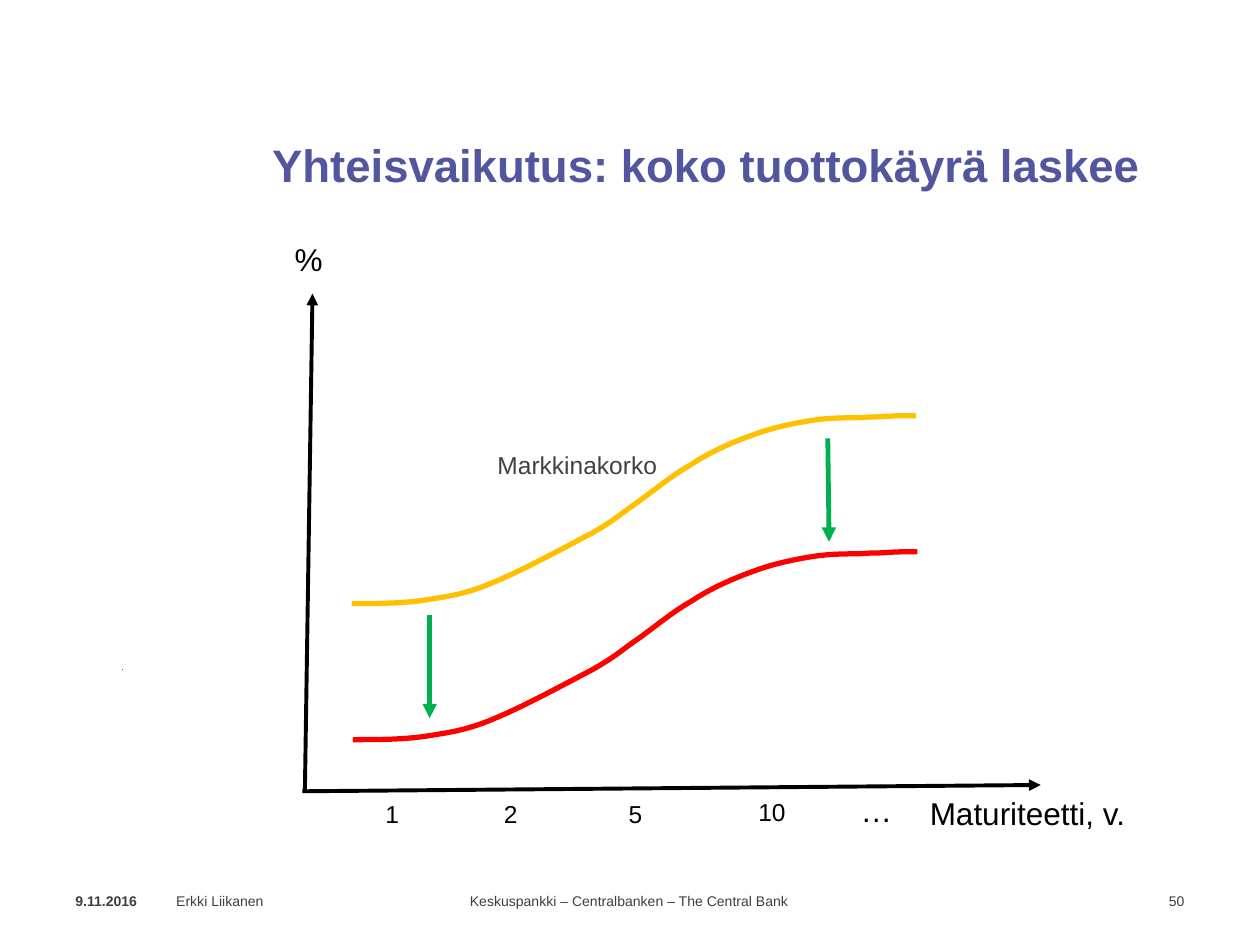
import pptx
import pptx.util
import pptx.dml.color
import pptx.enum.shapes
import pptx.enum.text
import pptx.oxml.ns
import lxml.etree

PX = 9144
COLORS = {"title": "51569E", "footer": "3F3E3E", "label": "414042", "axis": "000000",
          "before": "FFC000", "after": "FF0000", "shift": "00B050", "tick": "4D529C"}
LEFT = pptx.enum.text.PP_ALIGN.LEFT
CENTER = pptx.enum.text.PP_ALIGN.CENTER
RIGHT = pptx.enum.text.PP_ALIGN.RIGHT
TOP = pptx.enum.text.MSO_ANCHOR.TOP
MIDDLE = pptx.enum.text.MSO_ANCHOR.MIDDLE
qn = pptx.oxml.ns.qn


def put_text(sp, text, size, color, align=LEFT, anchor=TOP, bold=False, wrap=True):
    tf = sp.text_frame
    tf.text = text
    tf.word_wrap = wrap
    tf.auto_size = pptx.enum.text.MSO_AUTO_SIZE.NONE
    tf.vertical_anchor = anchor
    p = tf.paragraphs[0]
    p.alignment = align
    font = p.runs[0].font
    font.name = "Arial"
    font.size = pptx.util.Pt(size)
    font.bold = bold
    font.color.rgb = pptx.dml.color.RGBColor.from_string(COLORS[color])


def style_line(sp, color, width):
    sp.line.color.rgb = pptx.dml.color.RGBColor.from_string(COLORS[color])
    sp.line.width = pptx.util.Pt(width)


prs = pptx.Presentation()
prs.slide_width = 1000 * PX
prs.slide_height = 750 * PX
s = prs.slides.add_slide(prs.slide_layouts[5])

title = s.shapes.title
title.left, title.top, title.width, title.height = [v * PX for v in (206, 104, 716, 61)]
put_text(title, "Yhteisvaikutus: koko tuottokäyrä laskee", 26, "title", bold=True)

curve = [(279, 479),
         (299, 479), (320, 479), (339, 476), (358, 473), (371, 471), (392, 462),
         (414, 453), (451, 433), (470, 423), (489, 412), (491, 409), (504, 400),
         (517, 391), (532, 378), (548, 369), (563, 359), (581, 351), (598, 345),
         (614, 339), (634, 335), (649, 333), (665, 331), (679, 332), (689, 331),
         (700, 331), (707, 330), (713, 330), (719, 330), (723, 330), (727, 330)]
for color, dx, dy in [("before", 0, 0), ("after", 1, 108)]:
    points = [(x + dx, y + dy) for x, y in curve]
    fb = s.shapes.build_freeform(*points[0], scale=PX)
    fb.add_line_segments(points[1:], close=False)
    sp = fb.convert_to_shape()
    sp.shadow.inherit = False
    sp.fill.background()
    style_line(sp, color, 3)
    segments = list(sp._element.iter(qn("a:lnTo")))
    for i in range(0, len(segments), 3):
        bezier = lxml.etree.SubElement(segments[i].getparent(), qn("a:cubicBezTo"))
        for segment in segments[i:i + 3]:
            bezier.append(segment[0])
            segment.getparent().remove(segment)

lines = [(97, 532, 97, 531, "tick", 0.75, False),
         (242, 628, 248, 233, "axis", 2.25, True),
         (240, 628, 826, 623, "axis", 2.25, True),
         (657, 348, 658, 430, "shift", 2.75, True),
         (341, 488, 341, 570, "shift", 2.75, True)]
for x1, y1, x2, y2, color, width, arrow in lines:
    c = s.shapes.add_connector(pptx.enum.shapes.MSO_CONNECTOR.STRAIGHT,
                               x1 * PX, y1 * PX, x2 * PX, y2 * PX)
    style_line(c, color, width)
    if arrow:
        lxml.etree.SubElement(c.line._get_or_add_ln(), qn("a:tailEnd"), type="triangle")
    lxml.etree.SubElement(c._element.spPr, qn("a:effectLst"))

labels = [("%", 223, 186, 43, 40, 18, "axis", RIGHT, False),
          ("Markkinakorko", 385, 352, 147, 34, 14, "label", LEFT, False),
          ("1", 296, 629, 31, 34, 14, "axis", LEFT, False),
          ("2", 390, 629, 71, 34, 14, "axis", LEFT, True),
          ("5", 489, 629, 31, 34, 14, "axis", LEFT, False),
          ("10", 592, 628, 66, 34, 14, "axis", LEFT, True),
          ("…", 672, 623, 46, 40, 18, "axis", RIGHT, True),
          ("Maturiteetti, v.", 726, 625, 177, 40, 18, "axis", RIGHT, False)]
for text, x, y, w, h, size, color, align, wrap in labels:
    sp = s.shapes.add_textbox(x * PX, y * PX, w * PX, h * PX)
    put_text(sp, text, size, color, align, wrap=wrap)

footers = [("9.11.2016", 50, 80, LEFT, True),
           ("Erkki Liikanen", 130, 211, LEFT, False),
           ("Keskuspankki – Centralbanken – The Central Bank", 353, 293, CENTER, False),
           ("50", 893, 57, RIGHT, False)]
for text, x, w, align, bold in footers:
    sp = s.shapes.add_textbox(x * PX, 695 * PX, w * PX, 40 * PX)
    put_text(sp, text, 8, "footer", align, MIDDLE, bold)

prs.save("out.pptx")
